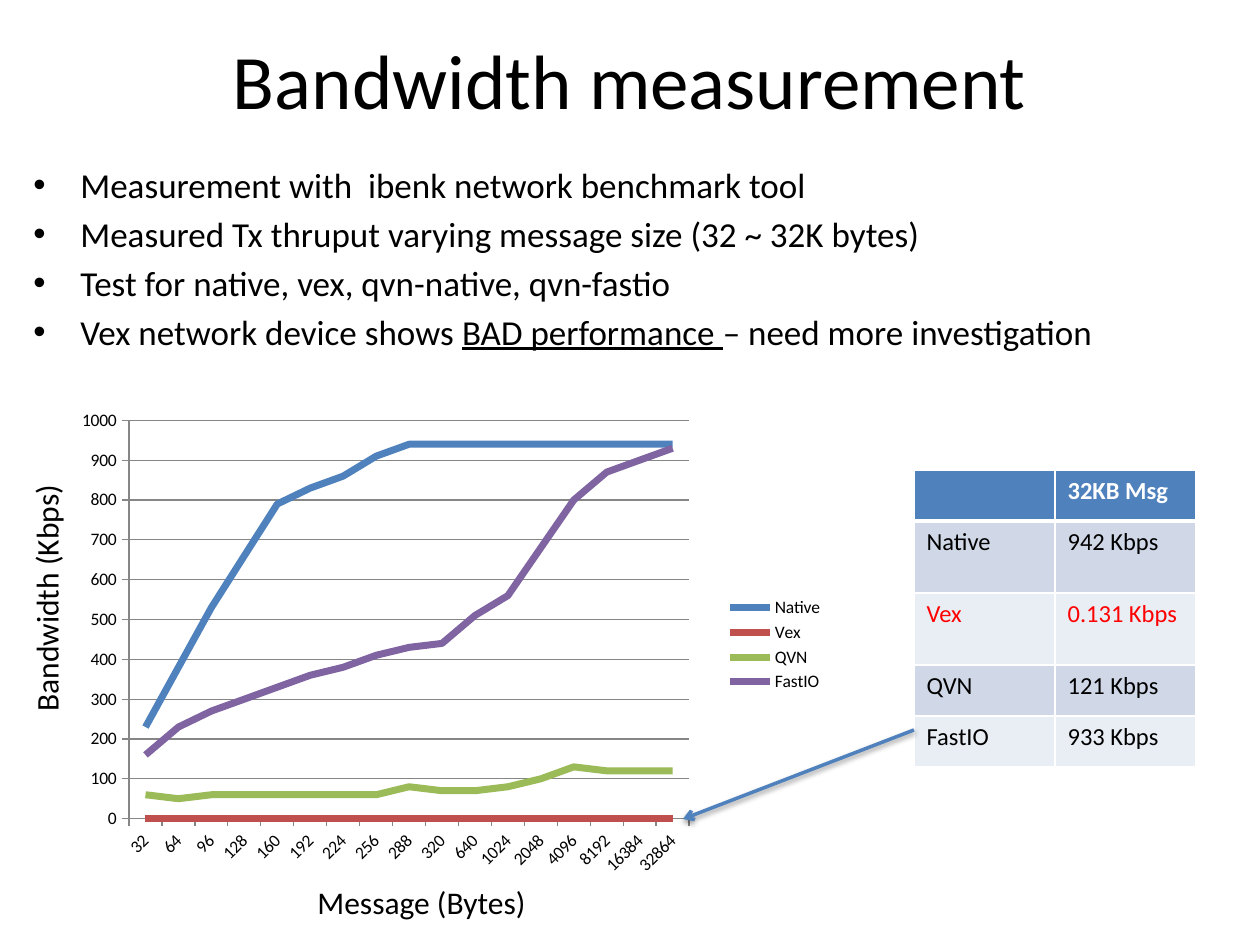
from lxml import etree
from pptx import Presentation, util as u
from pptx.chart.data import CategoryChartData
from pptx.dml.color import RGBColor
from pptx.enum import chart as charts, shapes, text
from pptx.oxml import parse_xml
from pptx.oxml.ns import nsdecls, qn

PX_PER_INCH = 126


def px(length):
    return u.Emu(round(length * 914400 / PX_PER_INCH))


def color(hex_code):
    return RGBColor.from_string(hex_code)


class Deck:
    FONT = "Calibri"
    BLACK, WHITE, RED, BLUE = "000000", "FFFFFF", "FF0000", "4F81BD"
    BANDS = ("D0D8E8", "E9EDF4")
    GRID = "868686"

    def __init__(self, width, height):
        self.prs = Presentation()
        self.prs.slide_width, self.prs.slide_height = px(width), px(height)
        self.slide = self.prs.slides.add_slide(self.prs.slide_layouts[6])

    def style(self, font, size, hex_code=BLACK, bold=False):
        font.name, font.size, font.bold = self.FONT, u.Pt(size), bold
        font.color.rgb = color(hex_code)

    def text(self, box, lines, size, align=text.PP_ALIGN.LEFT,
             anchor=text.MSO_ANCHOR.TOP, wrap=True, rotation=0):
        label = self.slide.shapes.add_textbox(*map(px, box))
        label.rotation = rotation
        frame = label.text_frame
        frame.text = "\n".join(lines)
        frame.word_wrap, frame.vertical_anchor = wrap, anchor
        for paragraph in frame.paragraphs:
            paragraph.alignment = align
            for run in paragraph.runs:
                self.style(run.font, size)
        return frame

    def bullets(self, box, lines, size, indent, underlined):
        """Bulleted list in which one phrase is underlined."""
        frame = self.text(box, lines, size)
        for paragraph in frame.paragraphs:
            before, phrase, after = paragraph.text.partition(underlined)
            if phrase:
                paragraph.runs[0].text = before
                for part in (phrase, after):
                    run = paragraph.add_run()
                    run.text = part
                    run.font.underline = part == phrase
                    self.style(run.font, size)
            paragraph.space_before = u.Pt(size * 0.2)
            props = paragraph._p.get_or_add_pPr()
            props.set("marL", str(px(indent)))
            props.set("indent", str(-px(indent)))
            props.append(parse_xml(f'<a:buFont {nsdecls("a")} typeface="Arial"/>'))
            props.append(parse_xml(f'<a:buChar {nsdecls("a")} char="•"/>'))

    def line_chart(self, box, categories, series, plot_area):
        data = CategoryChartData()
        data.categories = categories
        for name, _, values in series:
            data.add_series(name, values)
        chart = self.slide.shapes.add_chart(
            charts.XL_CHART_TYPE.LINE, *map(px, box), data).chart
        self.style(chart.font, 10)
        chart.has_title = False
        chart.has_legend = True
        chart.legend.position = charts.XL_LEGEND_POSITION.RIGHT
        chart.legend.include_in_layout = False
        plot = chart.plots[0]
        plot.vary_by_categories = False
        for line, (_, hex_code, _) in zip(plot.series, series):
            line.smooth = False
            line.marker.style = charts.XL_MARKER_STYLE.NONE
            line.format.line.width = u.Pt(4)
            line.format.line.color.rgb = color(hex_code)
        values_axis = chart.value_axis
        values_axis.minimum_scale, values_axis.maximum_scale = 0, 1000
        values_axis.major_unit = 100
        values_axis.has_major_gridlines = True
        for part in (values_axis, chart.category_axis, values_axis.major_gridlines):
            part.format.line.color.rgb = color(self.GRID)
            part.format.line.width = u.Pt(0.75)
        for axis in (values_axis, chart.category_axis):
            axis.major_tick_mark = charts.XL_TICK_MARK.OUTSIDE
        self.place_plot(chart, plot_area)

    def place_plot(self, chart, plot_area):
        """Fix the inner plot area as x, y, w, h fractions of the chart."""
        area = chart._chartSpace.chart.plotArea
        for old in area.findall(qn("c:layout")):
            area.remove(old)
        layout = parse_xml(f'<c:layout {nsdecls("c")}><c:manualLayout/></c:layout>')
        settings = [("layoutTarget", "inner"), ("xMode", "edge"), ("yMode", "edge")]
        for tag, value in settings + list(zip("xywh", plot_area)):
            etree.SubElement(layout[0], qn(f"c:{tag}")).set("val", str(value))
        area.insert(0, layout)

    def table(self, left, top, column_width, row_heights, rows, highlight):
        grid = self.slide.shapes.add_table(
            len(rows), len(rows[0]), px(left), px(top),
            px(column_width * len(rows[0])), px(sum(row_heights))).table
        for column in grid.columns:
            column.width = px(column_width)
        for r, (height, row) in enumerate(zip(row_heights, rows)):
            grid.rows[r].height = px(height)
            header = r == 0
            ink = self.WHITE if header else self.RED if row[0] == highlight else self.BLACK
            for c, content in enumerate(row):
                cell = grid.cell(r, c)
                cell.text = content
                for run in cell.text_frame.paragraphs[0].runs:
                    self.style(run.font, 14, ink, bold=header)
                cell.fill.solid()
                cell.fill.fore_color.rgb = color(
                    self.BLUE if header else self.BANDS[(r - 1) % 2])
                self.borders(cell, {"L": 1, "R": 1, "T": 3 if r == 1 else 1,
                                    "B": 3 if header else 1})

    def borders(self, cell, widths):
        props = cell._tc.get_or_add_tcPr()
        for i, (side, points) in enumerate(widths.items()):
            props.insert(i, parse_xml(
                f'<a:ln{side} {nsdecls("a")} w="{u.Pt(points)}"><a:solidFill>'
                f'<a:srgbClr val="{self.WHITE}"/></a:solidFill></a:ln{side}>'))

    def arrow(self, start, end):
        """Arrow with a soft shadow below it."""
        link = self.slide.shapes.add_connector(
            shapes.MSO_CONNECTOR.STRAIGHT, *map(px, start + end))
        link.line.color.rgb = color(self.BLUE)
        link.line.width = u.Pt(2)
        link.line._get_or_add_ln().append(
            parse_xml(f'<a:tailEnd {nsdecls("a")} type="arrow"/>'))
        link._element.spPr.append(parse_xml(
            f'<a:effectLst {nsdecls("a")}><a:outerShdw blurRad="{u.Pt(3.1)}" '
            f'dist="{u.Pt(1.6)}" dir="5400000" rotWithShape="0">'
            f'<a:srgbClr val="{self.BLACK}"><a:alpha val="38000"/></a:srgbClr>'
            '</a:outerShdw></a:effectLst>'))


def main():
    deck = Deck(1260, 945)
    deck.text((63, 0, 1134, 158), ["Bandwidth measurement"], 44,
              text.PP_ALIGN.CENTER, text.MSO_ANCHOR.MIDDLE)
    deck.bullets((21, 157, 1155, 199), [
        "Measurement with  ibenk network benchmark tool",
        "Measured Tx thruput varying message size (32 ~ 32K bytes)",
        "Test for native, vex, qvn-native, qvn-fastio",
        "Vex network device shows BAD performance – need more investigation",
    ], size=20, indent=47, underlined="BAD performance ")

    message_sizes = [*range(32, 321, 32), 640, *(2 ** n for n in range(10, 15)), 32864]
    deck.line_chart((63, 388, 777, 514), message_sizes, [
        ("Native ", "4F81BD", [230, 380, 530, 660, 790, 830, 860, 910] + [940] * 9),
        ("Vex", "C0504D", [0] * 17),
        ("QVN", "9BBB59", [60, 50, 60, 60, 60, 60, 60, 60, 80, 70, 70, 80,
                           100, 130, 120, 120, 120]),
        ("FastIO", "8064A2", [160, 230, 270, 300, 330, 360, 380, 410, 430, 440,
                              510, 560, 680, 800, 870, 900, 930]),
    ], plot_area=(0.085, 0.063, 0.721, 0.775))
    deck.text((305, 877, 236, 50), ["Message (Bytes)"], 18, wrap=False)
    deck.text((-81, 572, 254, 50), ["Bandwidth (Kbps)"], 18, wrap=False, rotation=270)

    deck.table(914, 470, 141, [51, 72, 72, 51, 51], [
        ("", "32KB Msg"),
        ("Native", "942 Kbps"),
        ("Vex", "0.131 Kbps"),
        ("QVN", "121 Kbps"),
        ("FastIO", "933 Kbps"),
    ], highlight="Vex")
    deck.arrow((914, 730), (683, 819))
    deck.prs.save("out.pptx")


if __name__ == "__main__":
    main()
